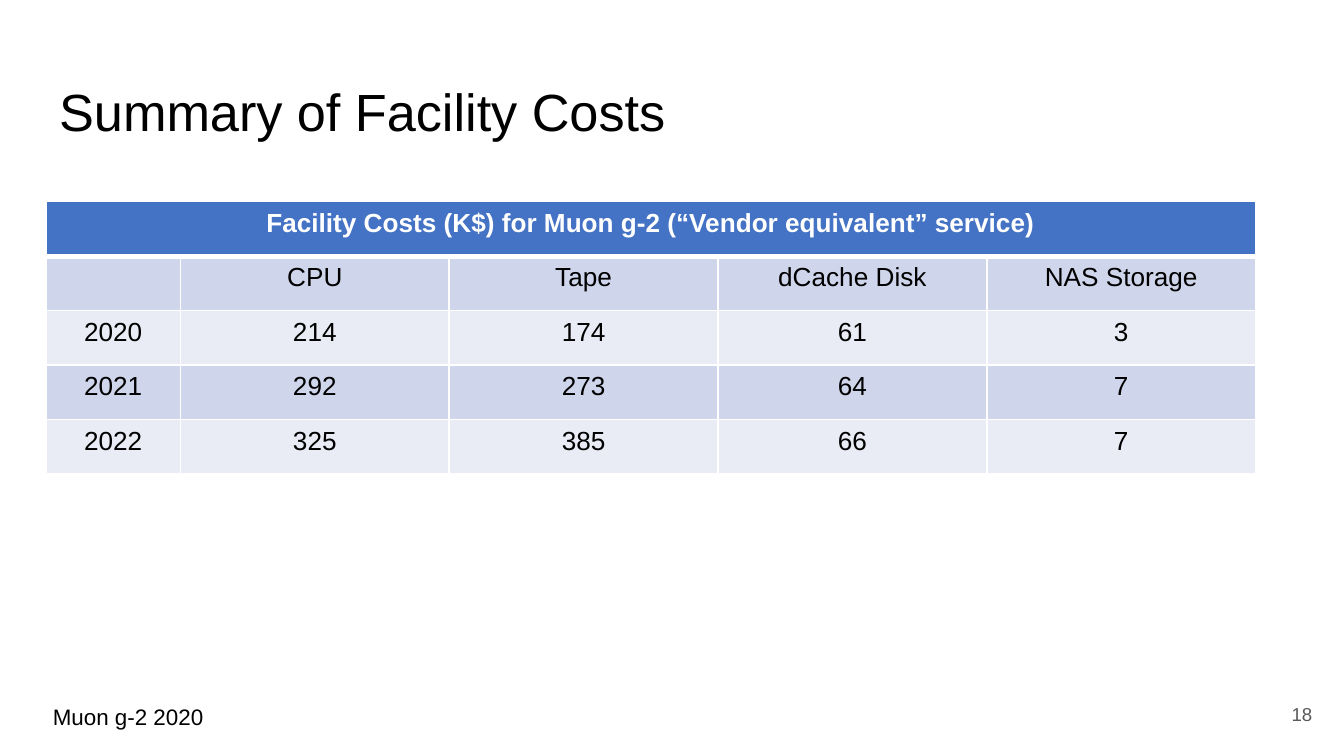
import pptx
import pptx.util
import pptx.dml.color
import pptx.enum.text
import pptx.oxml.ns
from lxml import etree
from pptx.util import Cm, Pt

COLORS = {
    "text": "000000",
    "page_number": "595959",
    "white": "FFFFFF",
    "header": "4472C4",
    "band_dark": "CFD5EA",
    "band_light": "E9EBF5",
}
FONT = "Arial"
ALIGN = pptx.enum.text.PP_ALIGN
ANCHOR = pptx.enum.text.MSO_ANCHOR

TABLE_TITLE = "Facility Costs (K$) for Muon g-2 (“Vendor equivalent” service)"
COST_ROWS = [
    ["", "CPU", "Tape", "dCache Disk", "NAS Storage"],
    ["2020", "214", "174", "61", "3"],
    ["2021", "292", "273", "64", "7"],
    ["2022", "325", "385", "66", "7"],
]


def rgb(name):
    return pptx.dml.color.RGBColor.from_string(COLORS[name])


def add_run(paragraph, text, size, color, bold=False):
    run = paragraph.add_run()
    run.text = text
    run.font.name = FONT
    run.font.size = Pt(size)
    run.font.bold = bold
    run.font.color.rgb = rgb(color)


def add_text(slide, box, text, size, color="text", align=ALIGN.LEFT,
             anchor=ANCHOR.TOP, wrap=True):
    shape = slide.shapes.add_textbox(*(Cm(length) for length in box))
    frame = shape.text_frame
    frame.word_wrap = wrap
    frame.vertical_anchor = anchor
    frame.margin_left = frame.margin_right = Cm(0.25)
    frame.margin_top = frame.margin_bottom = Cm(0.25)
    paragraph = frame.paragraphs[0]
    paragraph.alignment = align
    add_run(paragraph, text, size, color)


def set_borders(cell, top, bottom):
    properties = cell._tc.get_or_add_tcPr()
    for side, width in (("L", 1), ("R", 1), ("T", top), ("B", bottom)):
        line = etree.SubElement(properties, pptx.oxml.ns.qn(f"a:ln{side}"), w=str(Pt(width)))
        fill = etree.SubElement(line, pptx.oxml.ns.qn("a:solidFill"))
        etree.SubElement(fill, pptx.oxml.ns.qn("a:srgbClr"), val=COLORS["white"])


def fill_cell(cell, text, fill, color="text", bold=False, top=1, bottom=1):
    set_borders(cell, top, bottom)
    cell.fill.solid()
    cell.fill.fore_color.rgb = rgb(fill)
    if text:
        paragraph = cell.text_frame.paragraphs[0]
        paragraph.alignment = ALIGN.CENTER
        add_run(paragraph, text, 14, color, bold)


def add_cost_table(slide):
    row_count, column_count = len(COST_ROWS) + 1, len(COST_ROWS[0])
    table = slide.shapes.add_table(row_count, column_count, Cm(0.87), Cm(3.81),
                                   Cm(22.86), Cm(5.15)).table
    table.first_row = table.horz_banding = False
    for index, column in enumerate(table.columns):
        column.width = Cm(5.08 if index else 2.54)
    for row in table.rows:
        row.height = Cm(1.03)

    # Title row across all columns, with a thick rule below it
    table.cell(0, 0).merge(table.cell(0, column_count - 1))
    for index in range(column_count):
        fill_cell(table.cell(0, index), "" if index else TABLE_TITLE,
                  "header", "white", bold=True, bottom=3)

    # Banded body
    for row_index, values in enumerate(COST_ROWS, start=1):
        band = "band_dark" if row_index % 2 else "band_light"
        for column_index, value in enumerate(values):
            fill_cell(table.cell(row_index, column_index), value, band,
                      top=3 if row_index == 1 else 1)


def main():
    presentation = pptx.Presentation()
    presentation.slide_width = Cm(25.4)
    presentation.slide_height = Cm(14.29)
    slide = presentation.slides.add_slide(presentation.slide_layouts[6])

    # Footer, title and page number
    add_text(slide, (0.75, 13.05, 3.68, 0.74), "Muon g-2 2020", 12, wrap=False)
    add_text(slide, (0.87, 1.24, 23.67, 1.6), "Summary of Facility Costs", 28)
    add_text(slide, (23.53, 12.95, 1.52, 1.09), "18", 10, "page_number",
             ALIGN.RIGHT, ANCHOR.MIDDLE)

    # Costs by year and service
    add_cost_table(slide)

    presentation.save("out.pptx")


if __name__ == "__main__":
    main()
